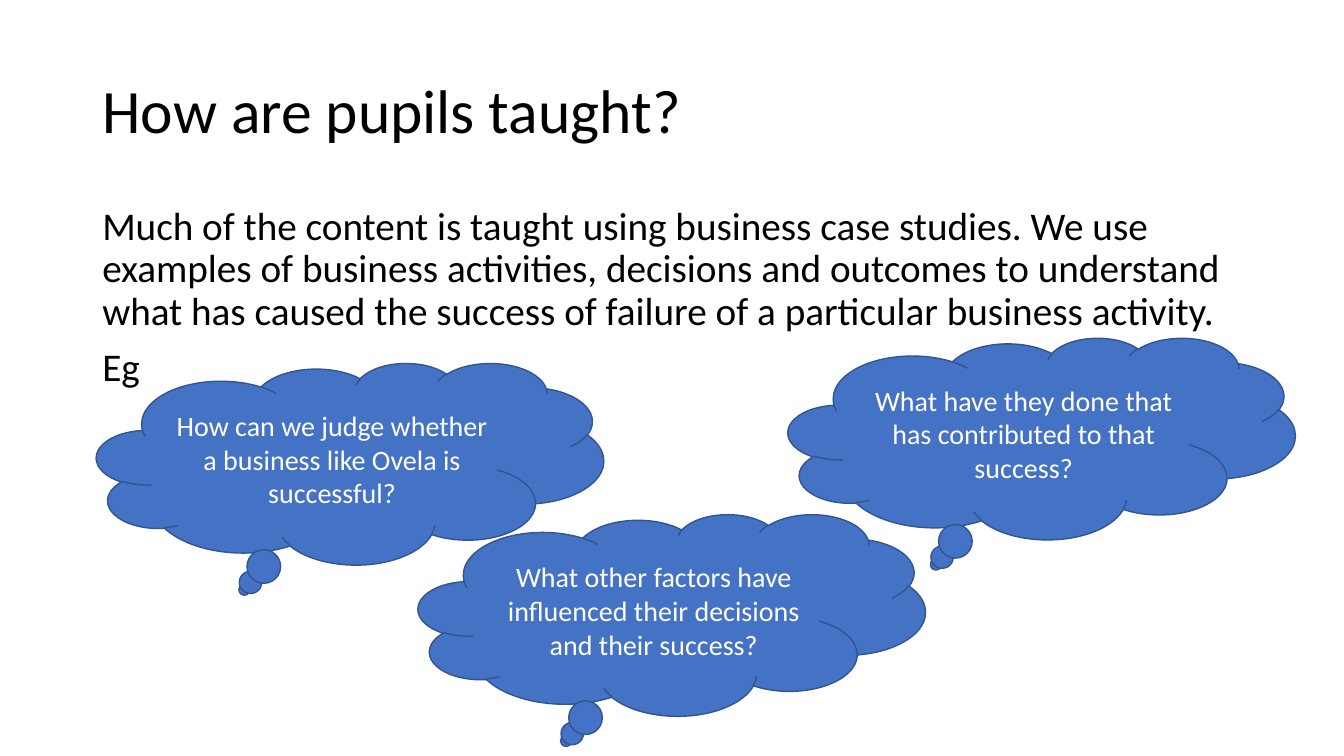
from pptx import Presentation
from pptx.dml.color import RGBColor
from pptx.enum.shapes import MSO_SHAPE
from pptx.enum.text import MSO_ANCHOR, PP_ALIGN
from pptx.util import Pt

CLOUD = MSO_SHAPE.CLOUD_CALLOUT
TOP, MIDDLE = MSO_ANCHOR.TOP, MSO_ANCHOR.MIDDLE
LEFT, CENTER = PP_ALIGN.LEFT, PP_ALIGN.CENTER


def color(code):
    return RGBColor.from_string(code)


def write(frame, *lines, size, ink, font, align=LEFT, anchor=TOP, pitch=1.0, before=0):
    frame.word_wrap = True
    frame.vertical_anchor = anchor
    for i, line in enumerate(lines):
        para = frame.paragraphs[0] if i == 0 else frame.add_paragraph()
        para.alignment = align
        para.line_spacing = pitch
        para.space_before = Pt(before)
        run = para.add_run()
        run.text = line
        run.font.size = Pt(size)
        run.font.name = font
        run.font.color.rgb = color(ink)


class Deck:
    font = "Calibri"
    ink = "000000"
    fill = "4472C4"
    edge = "325491"
    light = "FFFFFF"

    def __init__(self, width, height):
        self.file = Presentation()
        self.file.slide_width = Pt(width)
        self.file.slide_height = Pt(height)
        self.slide = self.file.slides.add_slide(self.file.slide_layouts[5])

    def title(self, text, left, top, width, height):
        box = self.slide.shapes.title
        box.left, box.top = Pt(left), Pt(top)
        box.width, box.height = Pt(width), Pt(height)
        write(box.text_frame, text, size=44, ink=self.ink, font=self.font,
              anchor=MIDDLE, pitch=0.9)

    def body(self, lines, left, top, width, height):
        box = self.slide.shapes.add_textbox(Pt(left), Pt(top), Pt(width), Pt(height))
        write(box.text_frame, *lines, size=28, ink=self.ink, font=self.font,
              pitch=0.9, before=10)

    def cloud(self, text, left, top, width, height):
        shape = self.slide.shapes.add_shape(CLOUD, Pt(left), Pt(top), Pt(width), Pt(height))
        shape.shadow.inherit = False
        shape.fill.solid()
        shape.fill.fore_color.rgb = color(self.fill)
        shape.line.color.rgb = color(self.edge)
        shape.line.width = Pt(1)
        write(shape.text_frame, text, size=20, ink=self.light, font=self.font,
              align=CENTER, anchor=MIDDLE)


def main():
    deck = Deck(960, 540)
    deck.title("How are pupils taught?", 66, 28.75, 828, 104.4)
    deck.body([
        "Much of the content is taught using business case studies. We use examples of "
        "business activities, decisions and outcomes to understand what has caused the "
        "success of failure of a particular business activity.",
        "Eg",
    ], 66, 144, 828, 342.6)
    clouds = [
        ("How can we judge whether a business like Ovela is successful?", 69, 259.2),
        ("What have they done that has contributed to that success?", 563, 241.2),
        ("What other factors have influenced their decisions and their success?", 298.8, 367.2),
    ]
    for text, left, top in clouds:
        deck.cloud(text, left, top, 362.2, 144)
    deck.file.save("out.pptx")


if __name__ == "__main__":
    main()
